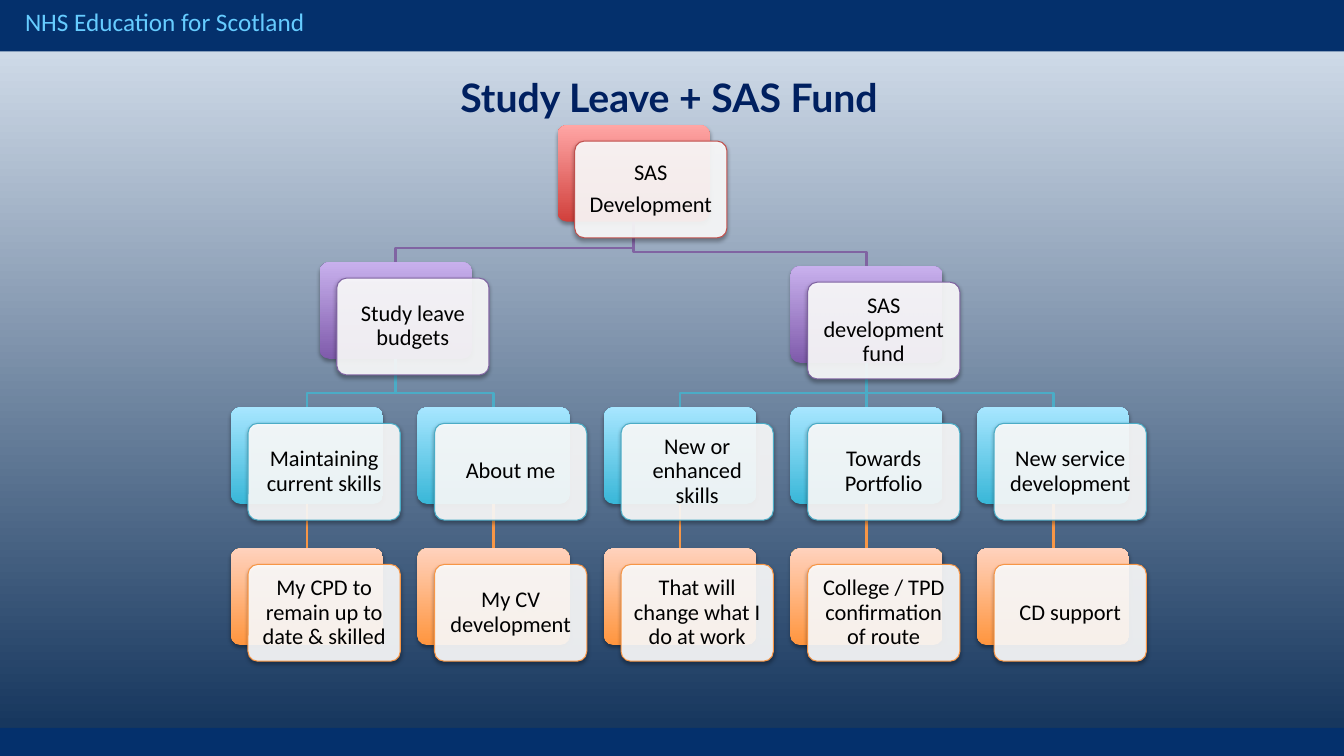
from lxml.etree import SubElement
from pptx import Presentation
from pptx.dml.color import RGBColor
from pptx.enum.shapes import MSO_CONNECTOR as Connector, MSO_SHAPE as Shape
from pptx.enum.text import MSO_ANCHOR as Anchor, PP_ALIGN as Align
from pptx.oxml.ns import qn
from pptx.util import Inches, Pt

CARD_WIDTH, CARD_HEIGHT = 1.51, 0.96
FRONT_DX, FRONT_DY = 0.17, 0.16
FIRST_COLUMN, COLUMN_STEP = 2.29, 1.85
SKILLS_TOP, OUTCOMES_TOP = 4.04, 5.44
BEND_ABOVE_CHILD = 0.14

# Level: (outline and connector, gradient bottom, gradient top)
RED = ("C0504D", "D1403C", "FFA6A5")
PURPLE = ("8064A2", "7F5BAB", "C8B0ED")
BLUE = ("4BACC6", "39B7D8", "A7E6FF")
ORANGE = ("F79646", "FF953E", "FFD2BD")

# Upper cards: (left, top, level, paragraphs)
DEVELOPMENT = (5.53, 1.24, RED, ["SAS", "Development"])
STUDY_LEAVE = (3.17, 2.6, PURPLE, ["Study leave budgets"])
SAS_FUND = (7.84, 2.64, PURPLE, ["SAS development fund"])

# Columns: (parent, skill, outcome)
COLUMNS = [
    (STUDY_LEAVE, "Maintaining current skills", "My CPD to remain up to date & skilled"),
    (STUDY_LEAVE, "About me", "My CV development"),
    (SAS_FUND, "New or enhanced skills", "That will change what I do at work"),
    (SAS_FUND, "Towards Portfolio", "College / TPD confirmation of route"),
    (SAS_FUND, "New service development", "CD support"),
]


def color(value):
    return RGBColor.from_string(value)


def fill_gradient(fill, *stops):
    """Upward gradient; each stop is (position, colour)."""
    fill.gradient()
    fill.gradient_angle = 90
    for stop, (position, value) in zip(fill.gradient_stops, stops):
        stop.position = position
        stop.color.rgb = color(value)


def set_alpha(color_element, percent):
    SubElement(color_element, qn("a:alpha"), val=str(percent * 1000))


def add_shadow(shape):
    shape.shadow.inherit = False
    effects = shape._element.spPr.find(qn("a:effectLst"))
    shadow = SubElement(effects, qn("a:outerShdw"), blurRad=str(Pt(3.1)),
                        dist=str(Pt(1.8)), dir="5400000", rotWithShape="0")
    set_alpha(SubElement(shadow, qn("a:srgbClr"), val="000000"), 35)


def add_text(paragraph, text, font_name, size, value, bold=False):
    run = paragraph.add_run()
    run.text = text
    font = run.font
    font.name, font.size, font.bold = font_name, Pt(size), bold
    font.color.rgb = color(value)


def add_band(slide, top, height):
    band = slide.shapes.add_shape(Shape.RECTANGLE, 0, Inches(top), Inches(13.33), Inches(height))
    band.shadow.inherit = False
    band.fill.solid()
    band.fill.fore_color.rgb = color("04306C")
    band.line.fill.background()


def add_header(slide, text):
    box = slide.shapes.add_textbox(Inches(0.15), Inches(0.01), Inches(5.66), Inches(0.4))
    box.text_frame.word_wrap = True
    add_text(box.text_frame.paragraphs[0], text, "Calibri", 18, "66CCFF")


def set_title(slide, text):
    title = slide.shapes.title
    title.left, title.top = Inches(3.75), Inches(0.52)
    title.width, title.height = Inches(5.77), Inches(0.89)
    title.text_frame.vertical_anchor = Anchor.MIDDLE
    paragraph = title.text_frame.paragraphs[0]
    paragraph.alignment = Align.CENTER
    add_text(paragraph, text, "Lato", 28, "002060", bold=True)


def add_rounded(slide, left, top):
    shape = slide.shapes.add_shape(Shape.ROUNDED_RECTANGLE, Inches(left), Inches(top),
                                   Inches(CARD_WIDTH), Inches(CARD_HEIGHT))
    shape.adjustments[0] = 0.1
    add_shadow(shape)
    return shape


def add_back(slide, card):
    left, top, (_, bottom_color, top_color), _ = card
    back = add_rounded(slide, left, top)
    fill_gradient(back.fill, (0, bottom_color), (1, top_color))
    back.line.fill.background()
    return back


def add_front(slide, card):
    left, top, (outline, _, _), paragraphs = card
    front = add_rounded(slide, left + FRONT_DX, top + FRONT_DY)
    front.fill.solid()
    front.fill.fore_color.rgb = color("FFFFFF")
    set_alpha(front._element.spPr.find(qn("a:solidFill"))[0], 90)
    front.line.color.rgb = color(outline)
    front.line.width = Pt(0.75)
    frame = front.text_frame
    frame.word_wrap = True
    frame.vertical_anchor = Anchor.MIDDLE
    frame.margin_left = frame.margin_right = Inches(0.1)
    frame.margin_top = frame.margin_bottom = Inches(0.1)
    for index, text in enumerate(paragraphs):
        paragraph = frame.add_paragraph() if index else frame.paragraphs[0]
        paragraph.alignment = Align.CENTER
        paragraph.line_spacing = 0.9
        paragraph.space_after = Pt(5.6)
        add_text(paragraph, text, "Calibri", 16, "000000")


def add_straight_link(slide, parent_back, child_back, value):
    link = slide.shapes.add_connector(Connector.STRAIGHT, 0, 0, 0, 0)
    link.begin_connect(parent_back, 2)
    link.end_connect(child_back, 0)
    link.line.color.rgb = color(value)
    link.line.width = Pt(2)
    SubElement(link._element.spPr, qn("a:effectLst"))


def add_bent_link(slide, parent, child):
    start_x, end_x = (card[0] + CARD_WIDTH / 2 for card in (parent, child))
    end_y = child[1]
    bend_y = end_y - BEND_ABOVE_CHILD
    points = [(start_x, parent[1] + CARD_HEIGHT), (start_x, bend_y), (end_x, bend_y), (end_x, end_y)]
    corners = [(Inches(x), Inches(y)) for x, y in points]
    builder = slide.shapes.build_freeform(*corners[0])
    builder.add_line_segments(corners[1:], close=False)
    link = builder.convert_to_shape()
    link.shadow.inherit = False
    link.fill.background()
    link.line.color.rgb = color(child[2][0])
    link.line.width = Pt(2)


def add_chart_of_cards(slide):
    cards = [DEVELOPMENT, STUDY_LEAVE, SAS_FUND]
    links = [(DEVELOPMENT, STUDY_LEAVE), (DEVELOPMENT, SAS_FUND)]
    for index, (parent, skill_text, outcome_text) in enumerate(COLUMNS):
        left = FIRST_COLUMN + index * COLUMN_STEP
        skill = (left, SKILLS_TOP, BLUE, [skill_text])
        outcome = (left, OUTCOMES_TOP, ORANGE, [outcome_text])
        cards += [skill, outcome]
        links += [(parent, skill), (skill, outcome)]

    backs = [add_back(slide, card) for card in cards]
    for parent, child in links:
        if abs(parent[0] - child[0]) < 0.01:
            add_straight_link(slide, backs[cards.index(parent)], backs[cards.index(child)], child[2][0])
        else:
            add_bent_link(slide, parent, child)
    for card in cards:
        add_front(slide, card)


def main():
    presentation = Presentation()
    presentation.slide_width, presentation.slide_height = Inches(13.33), Inches(7.5)
    slide = presentation.slides.add_slide(presentation.slide_layouts[5])
    fill_gradient(slide.background.fill, (0.04, "17375E"), (1, "DCE6F2"))
    add_band(slide, 0, 0.51)
    add_band(slide, 7.22, 0.28)
    add_header(slide, "NHS Education for Scotland")
    set_title(slide, "Study Leave + SAS Fund")
    add_chart_of_cards(slide)
    presentation.save("out.pptx")


if __name__ == "__main__":
    main()
